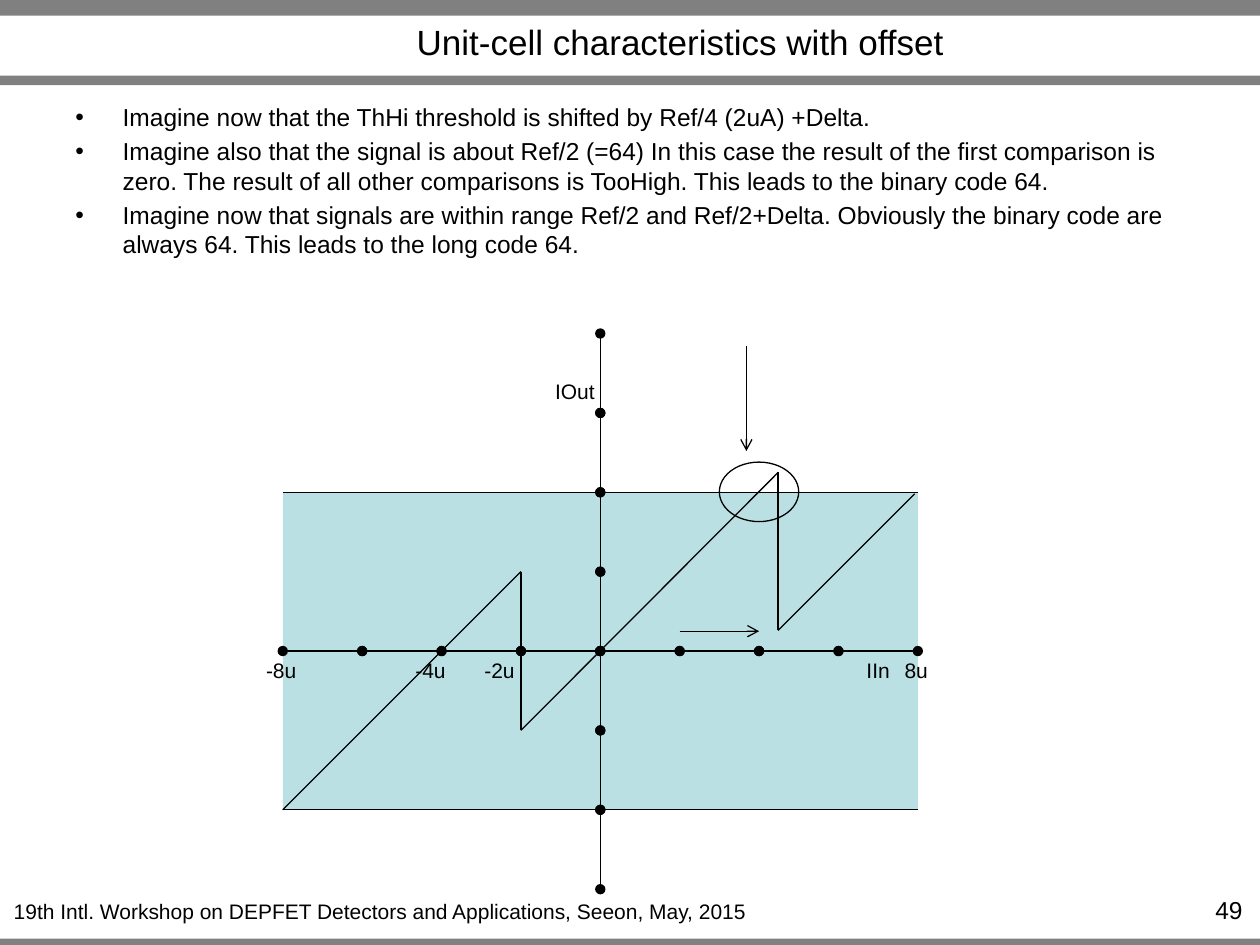
from pptx import Presentation
from pptx.dml.color import RGBColor
from pptx.enum.shapes import MSO_CONNECTOR, MSO_SHAPE
from pptx.enum.text import MSO_ANCHOR, MSO_AUTO_SIZE, PP_ALIGN
from pptx.oxml.ns import qn
from pptx.util import Pt
from lxml.etree import SubElement

BLACK = RGBColor(0x00, 0x00, 0x00)
GRAY = RGBColor(0x80, 0x80, 0x80)
TEAL = RGBColor(0xBB, 0xE0, 0xE3)
FONT = "Arial"
WIDTH, HEIGHT = 720, 540

BULLETS = [
    "Imagine now that the ThHi threshold is shifted by Ref/4 (2uA) +Delta.",
    "Imagine also that the signal is about Ref/2 (=64) In this case the result of the first "
    "comparison is zero. The result of all other comparisons is TooHigh. This leads to the "
    "binary code 64.",
    "Imagine now that signals are within range Ref/2 and Ref/2+Delta. Obviously the binary "
    "code are always 64. This leads to the long code 64.",
]
CURVE = [(-4, -2), (-1, 1), (-1, -1), (2.24, 2.25), (2.24, 0.26), (3.96, 1.98)]
LABELS = [("-8u", -4.02, -0.24), ("-4u", -2.14, -0.24), ("-2u", -1.27, -0.24),
          ("IIn", 3.5, -0.24), ("8u", 3.98, -0.24), ("IOut", -0.32, 3.27)]


def format_run(p, text, size):
    r = p.add_run()
    r.text = text
    r.font.name, r.font.size, r.font.color.rgb = FONT, Pt(size), BLACK


def add_text(slide, box, text, size=12, align=PP_ALIGN.CENTER, wrap=False):
    tf = slide.shapes.add_textbox(*map(Pt, box)).text_frame
    tf.word_wrap = wrap
    p = tf.paragraphs[0]
    p.alignment = align
    format_run(p, text, size)


def add_shape(slide, kind, box, fill=None, line=None):
    sp = slide.shapes.add_shape(kind, *map(Pt, box))
    sp.shadow.inherit = False
    if fill is None:
        sp.fill.background()
    else:
        sp.fill.solid()
        sp.fill.fore_color.rgb = fill
    if line is None:
        sp.line.fill.background()
    else:
        sp.line.color.rgb = line
        sp.line.width = Pt(0.75)


def add_line(slide, start, end, head=None, tail=None):
    cxn = slide.shapes.add_connector(MSO_CONNECTOR.STRAIGHT, *map(Pt, (*start, *end)))
    cxn.line.color.rgb = BLACK
    cxn.line.width = Pt(0.75)
    ln = cxn.line._get_or_add_ln()
    for tag, kind in (("a:headEnd", head), ("a:tailEnd", tail)):
        if kind:
            SubElement(ln, qn(tag), type=kind)
    SubElement(cxn._element.spPr, qn("a:effectLst"))


def add_frame(slide, width, height):
    for top, thick in ((0, 9), (43.2, 5.4), (height - 3.6, 5.4)):
        add_shape(slide, MSO_SHAPE.RECTANGLE, (0, top, width, min(thick, height - top)), GRAY)
    add_text(slide, (0.8, height - 30.24, 437, 21.8),
             "19th Intl. Workshop on DEPFET Detectors and Applications, Seeon, May, 2015",
             align=PP_ALIGN.LEFT, wrap=True)
    add_text(slide, (width - 65.4, height - 31.9, 62.6, 17.3), "49", size=14,
             align=PP_ALIGN.RIGHT, wrap=True)


def add_title(slide, box, text):
    sp = slide.shapes.title
    sp.left, sp.top, sp.width, sp.height = map(Pt, box)
    tf = sp.text_frame
    tf.auto_size = MSO_AUTO_SIZE.NONE
    tf.vertical_anchor = MSO_ANCHOR.MIDDLE
    p = tf.paragraphs[0]
    p.alignment = PP_ALIGN.CENTER
    format_run(p, text, 20)


def add_bullets(slide, box, items):
    tf = slide.shapes.add_textbox(*map(Pt, box)).text_frame
    tf.word_wrap = True
    for i, text in enumerate(items):
        p = tf.paragraphs[0] if i == 0 else tf.add_paragraph()
        pPr = p._p.get_or_add_pPr()
        pPr.set("marL", str(Pt(27)))
        pPr.set("indent", str(Pt(-27)))
        SubElement(pPr, qn("a:buFont"), typeface=FONT)
        SubElement(pPr, qn("a:buChar"), char="•")
        p.space_before = Pt(2.8 if i else 0)
        format_run(p, text, 14)


def add_plot(slide, box):
    left, top, width, height = box
    unit = width / 8

    def at(x, y):
        return left + (x + 4) * unit, top + (4 - y) * unit

    add_shape(slide, MSO_SHAPE.RECTANGLE, (*at(-4, 2), width, 4 * unit), TEAL)
    for x in range(-4, 4):
        add_line(slide, at(x, 0), at(x + 1, 0), "oval", "oval")
    for y in range(-3, 4):
        add_line(slide, at(0, y), at(0, y + 1), "oval", "oval")
    for y in (2, -2):
        add_line(slide, at(-4, y), at(4, y))
    for start, end in zip(CURVE, CURVE[1:]):
        add_line(slide, at(*start), at(*end))
    for text, x, y in LABELS:
        cx, cy = at(x, y)
        add_text(slide, (cx - 24, cy - 10.8, 48, 21.6), text)
    add_shape(slide, MSO_SHAPE.OVAL, (*at(1.5, 2.38), unit, 0.75 * unit), line=BLACK)
    add_line(slide, at(1, 0.25), at(2, 0.25), tail="arrow")
    add_line(slide, at(1.84, 3.84), at(1.84, 2.52), tail="arrow")


def main():
    prs = Presentation()
    prs.slide_width, prs.slide_height = Pt(WIDTH), Pt(HEIGHT)
    slide = prs.slides.add_slide(prs.slide_layouts[5])
    add_frame(slide, WIDTH, HEIGHT)
    add_title(slide, (93.6, 10.08, 590.4, 27.36), "Unit-cell characteristics with offset")
    add_bullets(slide, (36, 54.72, 648, 113.76), BULLETS)
    add_plot(slide, (161.6, 190.6, 362.88, 317.52))
    prs.save("out.pptx")


if __name__ == "__main__":
    main()
